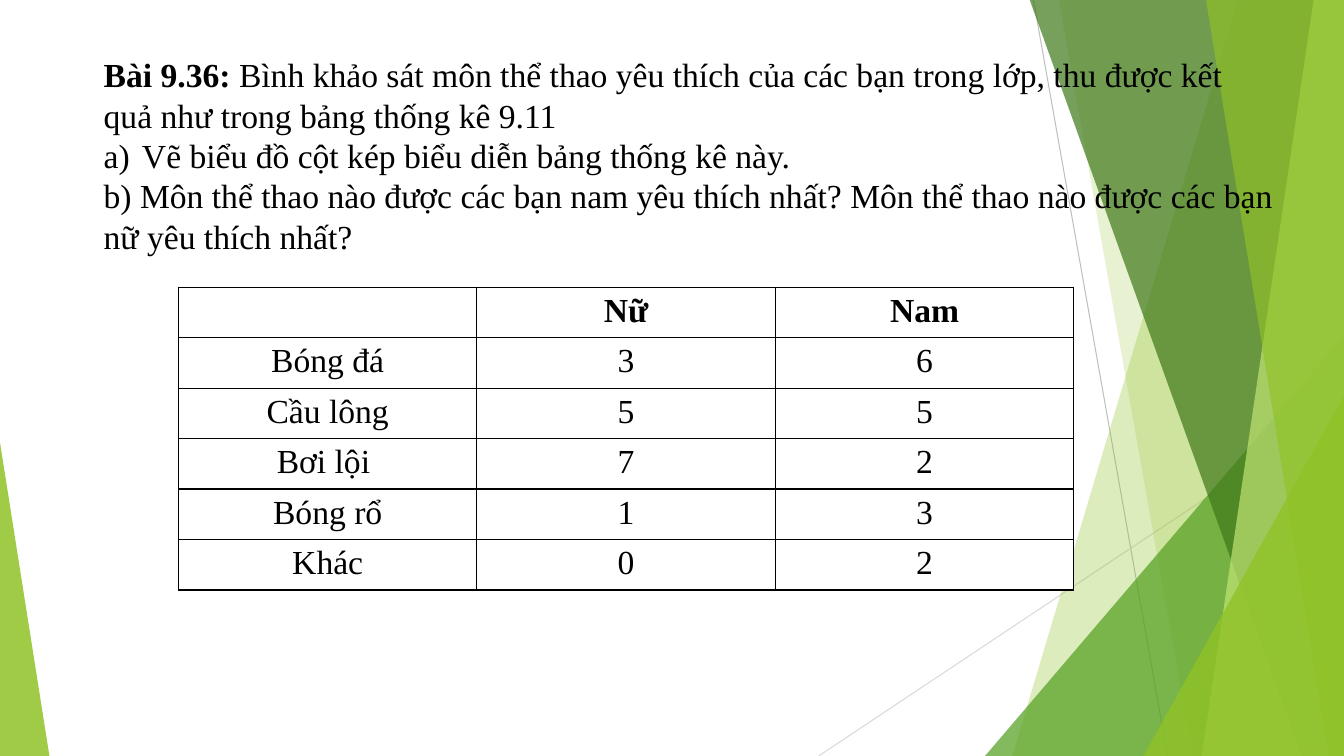
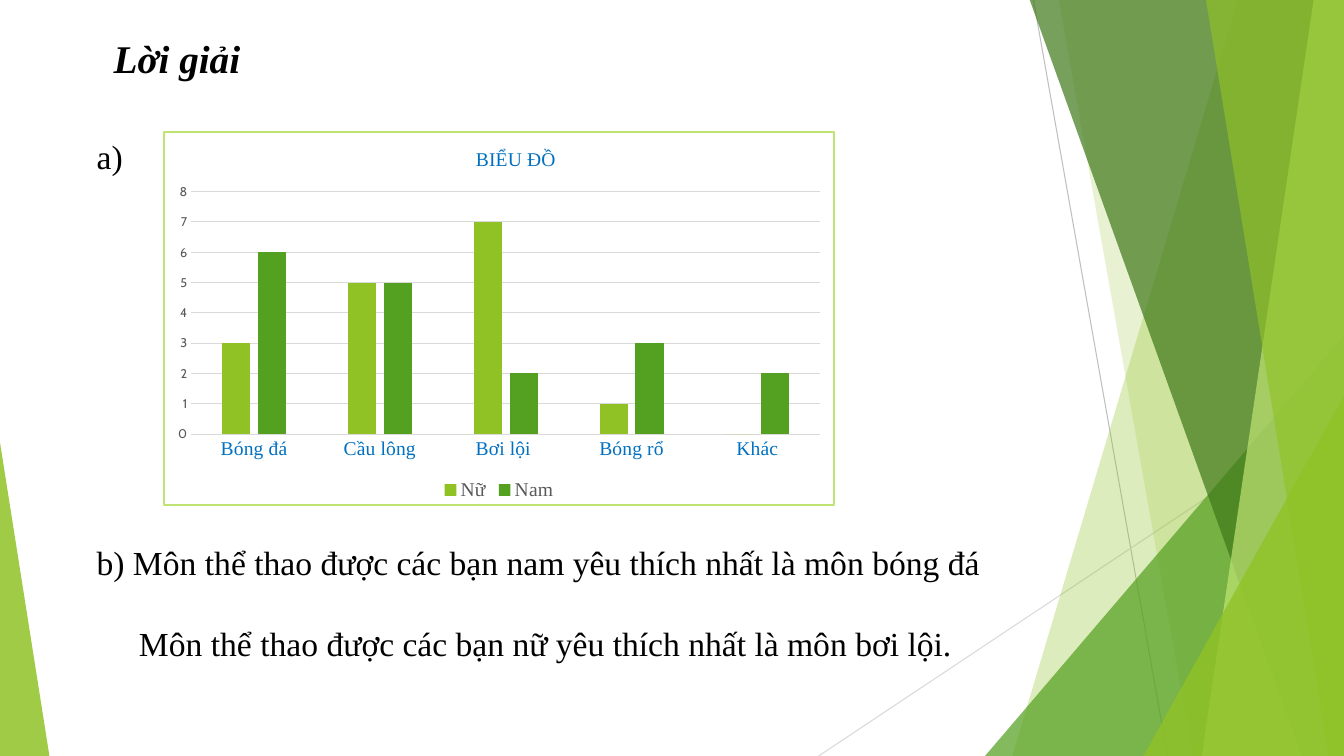
"""Build two slides on a sports survey: the exercise and its solution."""
from lxml import etree
from pptx import Presentation
from pptx import util as u
from pptx.chart import data as chart_data
from pptx.dml.color import RGBColor
from pptx.enum import chart as charts, shapes, text
from pptx.oxml import ns, parse_xml

PX = 9144
WIDTH, HEIGHT = 1333, 750
SERIF, SANS = "Times New Roman", "Cabin"
COLOURS = {
    "black": "000000", "white": "FFFFFF", "lime": "90C226", "green": "54A021",
    "forest": "3F7819", "pale": "C0E474", "blue": "0070C0", "grey": "595959",
    "line": "BFBFBF", "light": "D9D9D9",
}
SERIES = ["Nữ", "Nam"]
SPORTS = [("Bóng đá", 3, 6), ("Cầu lông", 5, 5), ("Bơi lội ", 7, 2), ("Bóng rổ", 1, 3), ("Khác", 0, 2)]


def px(*lengths):
    return [length * PX for length in lengths]


def rgb(name):
    return RGBColor.from_string(COLOURS[name])


def set_font(font, size, colour="black", name=SERIF, bold=False, italic=False):
    font.name, font.size = name, u.Pt(size)
    font.bold, font.italic = bold, italic
    font.color.rgb = rgb(colour)


def paint(shape, colour, alpha):
    shape.shadow.inherit = False
    shape.fill.solid()
    shape.fill.fore_color.rgb = rgb(colour)
    shape.line.fill.background()
    clr = shape.element.spPr.find(".//" + ns.qn("a:srgbClr"))
    etree.SubElement(clr, ns.qn("a:alpha"), val=str(alpha * 1000))
    return shape


def add_line(slide, start, end, colour):
    line = slide.shapes.add_connector(shapes.MSO_CONNECTOR.STRAIGHT, *px(*start, *end))
    line.line.color.rgb = rgb(colour)
    line.line.width = u.Pt(0.75)
    etree.SubElement(line.element.spPr, ns.qn("a:effectLst"))
    return line


def add_band(slide, top_left, bottom_left, bottom_right, colour, alpha):
    builder = slide.shapes.build_freeform(top_left, -1, scale=PX)
    builder.add_line_segments([(WIDTH, -1), (bottom_right, HEIGHT), (bottom_left, HEIGHT)])
    return paint(builder.convert_to_shape(), colour, alpha)


def add_triangle(slide, left, top, width, apex, colour, alpha):
    kind = shapes.MSO_SHAPE.ISOSCELES_TRIANGLE
    triangle = slide.shapes.add_shape(kind, *px(left, top, width, HEIGHT - top))
    triangle.adjustments[0] = apex
    return paint(triangle, colour, alpha)


def decorate_layout(layout, slide):
    facets = [
        add_line(slide, (1025, 0), (1158, HEIGHT), "line"),
        add_line(slide, (WIDTH, 403), (812, HEIGHT), "light"),
        add_band(slide, 1228, 1004, WIDTH, "lime", 30),
        add_band(slide, 1050, 1183, WIDTH, "lime", 20),
        add_triangle(slide, 977, 333, 356, 1, "green", 72),
        add_band(slide, 1021, 1291, WIDTH, "forest", 70),
        add_band(slide, 1303, 1192, WIDTH, "pale", 70),
        add_band(slide, 1196, 1318, WIDTH, "lime", 65),
        add_triangle(slide, 1134, 393, 199, 1, "lime", 80),
        add_triangle(slide, 0, 439, 49, 0, "lime", 85),
    ]
    for placeholder in list(layout.placeholders):
        layout.shapes.element.remove(placeholder.element)
    for facet in facets:
        layout.shapes.element.append(facet.element)


def add_text(slide, box, lines, size=24, **style):
    frame = slide.shapes.add_textbox(*px(*box)).text_frame
    frame.word_wrap = True
    for index, line in enumerate(lines):
        paragraph = frame.add_paragraph() if index else frame.paragraphs[0]
        paragraph.text = line
        set_font(paragraph.font, size, **style)
    return frame.paragraphs


def set_indent(paragraph, margin, hanging=0):
    properties = paragraph._p.get_or_add_pPr()
    properties.set("marL", str(margin * PX))
    properties.set("indent", str(-hanging * PX))
    return properties


def number_paragraph(paragraph, hanging):
    properties = set_indent(paragraph, hanging, hanging)
    etree.SubElement(properties, ns.qn("a:buFont"), typeface="+mj-lt")
    etree.SubElement(properties, ns.qn("a:buAutoNum"), type="alphaLcParenR")


def line_xml(tag, colour, width):
    return parse_xml(
        f'<{tag} {ns.nsdecls("a")} w="{u.Pt(width)}"><a:solidFill>'
        f'<a:srgbClr val="{COLOURS[colour]}"/></a:solidFill></{tag}>')


def add_table(slide, box, rows):
    table = slide.shapes.add_table(len(rows), len(rows[0]), *px(*box)).table
    table.first_row = table.horz_banding = False
    for row_index, row in enumerate(rows):
        for column_index, value in enumerate(row):
            cell = table.cell(row_index, column_index)
            cell.fill.solid()
            cell.fill.fore_color.rgb = rgb("white")
            properties = cell._tc.get_or_add_tcPr()
            for position, side in enumerate("LRTB"):
                properties.insert(position, line_xml(f"a:ln{side}", "black", 1))
            paragraph = cell.text_frame.paragraphs[0]
            paragraph.text = str(value)
            paragraph.alignment = text.PP_ALIGN.CENTER
            set_font(paragraph.font, 24, bold=row_index == 0)


def place_chart_part(element, position, inner=False, **fractions):
    for layout in element.findall(ns.qn("c:layout")):
        element.remove(layout)
    layout = etree.Element(ns.qn("c:layout"))
    manual = etree.SubElement(layout, ns.qn("c:manualLayout"))
    if inner:
        etree.SubElement(manual, ns.qn("c:layoutTarget"), val="inner")
    for mode in ("xMode", "yMode"):
        etree.SubElement(manual, ns.qn(f"c:{mode}"), val="edge")
    for name, value in fractions.items():
        etree.SubElement(manual, ns.qn(f"c:{name}"), val=str(value))
    element.insert(position, layout)


def add_border(chart):
    properties = parse_xml(
        f'<c:spPr {ns.nsdecls("c", "a")}><a:solidFill>'
        f'<a:srgbClr val="{COLOURS["white"]}"/></a:solidFill></c:spPr>')
    properties.append(line_xml("a:ln", "pale", 1.5))
    chart.element.find(ns.qn("c:chart")).addnext(properties)


def style_axes(chart):
    categories, values = chart.category_axis, chart.value_axis
    for axis in (categories, values):
        axis.major_tick_mark = axis.minor_tick_mark = charts.XL_TICK_MARK.NONE
    set_font(categories.tick_labels.font, 14, "blue")
    set_font(values.tick_labels.font, 9, "grey", SANS)
    values.minimum_scale, values.maximum_scale, values.major_unit = 0, 8, 1
    values.format.line.fill.background()
    for item in (categories, values.major_gridlines):
        item.format.line.color.rgb = rgb("light")
        item.format.line.width = u.Pt(0.75)


def add_sports_chart(slide, box):
    names, *columns = zip(*SPORTS)
    data = chart_data.CategoryChartData()
    data.categories = names
    for name, values in zip(SERIES, columns):
        data.add_series(name, values)
    kind = charts.XL_CHART_TYPE.COLUMN_CLUSTERED
    chart = slide.shapes.add_chart(kind, *px(*box), data).chart
    set_font(chart.font, 10, name=SANS)
    plot = chart.plots[0]
    plot.gap_width, plot.overlap, plot.vary_by_categories = 219, -27, False
    for series, colour in zip(plot.series, ("lime", "green")):
        series.format.fill.solid()
        series.format.fill.fore_color.rgb = rgb(colour)
    style_axes(chart)
    chart.has_legend = True
    chart.legend.position = charts.XL_LEGEND_POSITION.BOTTOM
    chart.legend.include_in_layout = False
    set_font(chart.legend.font, 14, "grey")
    title = chart.chart_title
    title.text_frame.text = "BIỂU ĐỒ"
    set_font(title.text_frame.paragraphs[0].font, 14, "blue")
    place_chart_part(title.element, 1, x=0.46, y=0.03)
    plot_area = chart.element.find(".//" + ns.qn("c:plotArea"))
    place_chart_part(plot_area, 0, inner=True, x=0.04, y=0.16, w=0.94, h=0.65)
    add_border(chart)


def build_exercise(slide):
    intro, first, second = add_text(slide, (93, 49, 1182, 212), [
        "",
        "Vẽ biểu đồ cột kép biểu diễn bảng thống kê này.",
        " Môn thể thao nào được các bạn nam yêu thích nhất? "
        "Môn thể thao nào được các bạn nữ yêu thích nhất?",
    ])
    label = intro.add_run()
    label.text = "Bài 9.36: "
    label.font.bold = True
    intro.add_run().text = ("Bình khảo sát môn thể thao yêu thích của các bạn trong lớp, "
                            "thu được kết quả như trong bảng thống kê 9.11")
    number_paragraph(first, 38)
    number_paragraph(second, 0)
    add_table(slide, (177, 285, 888, 300), [("", *SERIES), *SPORTS])


def build_solution(slide):
    add_sports_chart(slide, (162, 130, 666, 372))
    add_text(slide, (86, 130, 59, 50), ["a)"])
    answers = add_text(slide, (86, 533, 1218, 202), [
        "b) Môn thể thao được các bạn nam yêu thích nhất là môn bóng đá",
        "Môn thể thao được các bạn nữ yêu thích nhất là môn bơi lội.",
    ])
    answers[1].space_before = u.Pt(29)
    set_indent(answers[1], 42)
    add_text(slide, (103, 29, 246, 57), ["Lời giải"], size=28, bold=True, italic=True)


def main():
    presentation = Presentation()
    presentation.slide_width, presentation.slide_height = px(WIDTH, HEIGHT)
    layout = presentation.slide_layouts[6]
    exercise, solution = [presentation.slides.add_slide(layout) for _ in range(2)]
    decorate_layout(layout, exercise)
    build_exercise(exercise)
    build_solution(solution)
    presentation.save("out.pptx")


if __name__ == "__main__":
    main()
